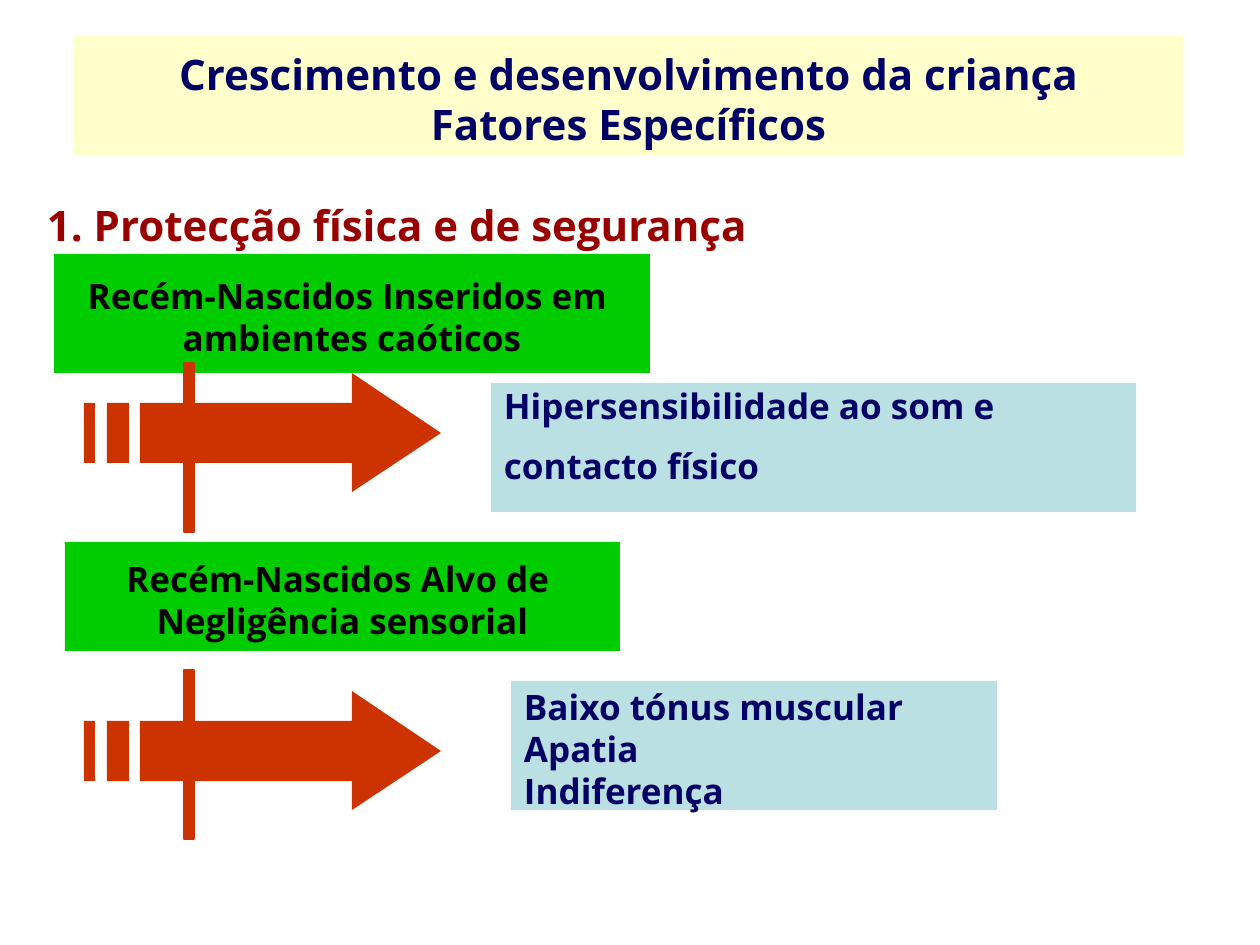
"""Build the slide on specific factors in child growth and development."""
import pptx
import pptx.dml.color
import pptx.enum.shapes
import pptx.enum.text
import pptx.util
from dataclasses import dataclass


@dataclass(frozen=True)
class Theme:
    font: str = "Open Sans"
    title: int = 24
    body: int = 20
    leading: float = 1.2
    navy: str = "000066"
    maroon: str = "990000"
    black: str = "000000"
    cream: str = "FFFFCC"
    green: str = "00CC00"
    blue: str = "BBE0E3"
    red: str = "CC3300"


PX = 914400 / 126
T = Theme()
RGB = pptx.dml.color.RGBColor.from_string
ALIGN = pptx.enum.text.PP_ALIGN
ANCHOR = pptx.enum.text.MSO_ANCHOR
RECT = pptx.enum.shapes.MSO_SHAPE.RECTANGLE


def px(*values):
    return [pptx.util.Emu(round(v * PX)) for v in values]


def write(sp, text, size=T.body, color=T.navy, align=ALIGN.LEFT,
          anchor=ANCHOR.MIDDLE, top=6, gap=0):
    tf = sp.text_frame
    tf.word_wrap = True
    tf.vertical_anchor = anchor
    tf.margin_left, tf.margin_right, tf.margin_top, tf.margin_bottom = px(13, 13, top, 0)
    for i, line in enumerate(text.split("\n")):
        p = tf.add_paragraph() if i else tf.paragraphs[0]
        p.text = line
        p.alignment = align
        p.line_spacing = pptx.util.Pt(size * T.leading)
        p.space_before = pptx.util.Pt(gap if i else 0)
        for r in p.runs:
            r.font.name = T.font
            r.font.size = pptx.util.Pt(size)
            r.font.bold = True
            r.font.color.rgb = RGB(color)


prs = pptx.Presentation()
prs.slide_width, prs.slide_height = px(1260, 945)
s = prs.slides.add_slide(prs.slide_layouts[6])

heading = s.shapes.add_textbox(*px(34, 197, 1200, 51))
write(heading, "1. Protecção física e de segurança", size=T.title,
      color=T.maroon, anchor=ANCHOR.TOP, top=3)

centred = dict(align=ALIGN.CENTER)
cause = dict(color=T.black, **centred)
boxes = [
    ((491, 383, 645, 129), T.blue, "Hipersensibilidade ao som e\ncontacto físico",
     dict(anchor=ANCHOR.TOP, top=2, gap=10)),
    ((511, 681, 486, 129), T.blue, "Baixo tónus muscular\nApatia\nIndiferença", {}),
    ((54, 254, 596, 119), T.green,
     "Recém-Nascidos Inseridos em \nambientes caóticos", cause),
    ((74, 36, 1109, 119), T.cream,
     "Crescimento e desenvolvimento da criança\vFatores Específicos",
     dict(size=T.title, **centred)),
    ((65, 542, 555, 109), T.green,
     "Recém-Nascidos Alvo de \nNegligência sensorial", cause),
]
for place, fill, text, fmt in boxes:
    sp = s.shapes.add_shape(RECT, *px(*place))
    sp.shadow.inherit = False
    sp.fill.solid()
    sp.fill.fore_color.rgb = RGB(fill)
    sp.line.fill.background()
    write(sp, text, **fmt)

arrow_parts = [
    [(352, 0), (352, 30), (140, 30), (140, 90), (352, 90), (352, 119), (441, 60)],
    [(107, 30), (107, 90), (129, 90), (129, 30)],
    [(84, 30), (84, 90), (95, 90), (95, 30)],
]
for bar_top, arrow_top in [(363, 373), (670, 691)]:
    bar = s.shapes.add_shape(RECT, *px(184, bar_top, 10, 169))
    bar.line.color.rgb = RGB(T.red)
    bar.line.width = pptx.util.Pt(0.75)

    outline = s.shapes.build_freeform(*arrow_parts[0][0], scale=PX)
    for i, part in enumerate(arrow_parts):
        if i:
            outline.move_to(*part[0])
        outline.add_line_segments(part[1:], close=True)
    arrow = outline.convert_to_shape(*px(0, arrow_top))
    arrow.line.fill.background()

    for sp in (bar, arrow):
        sp.shadow.inherit = False
        sp.fill.solid()
        sp.fill.fore_color.rgb = RGB(T.red)

prs.save("out.pptx")
